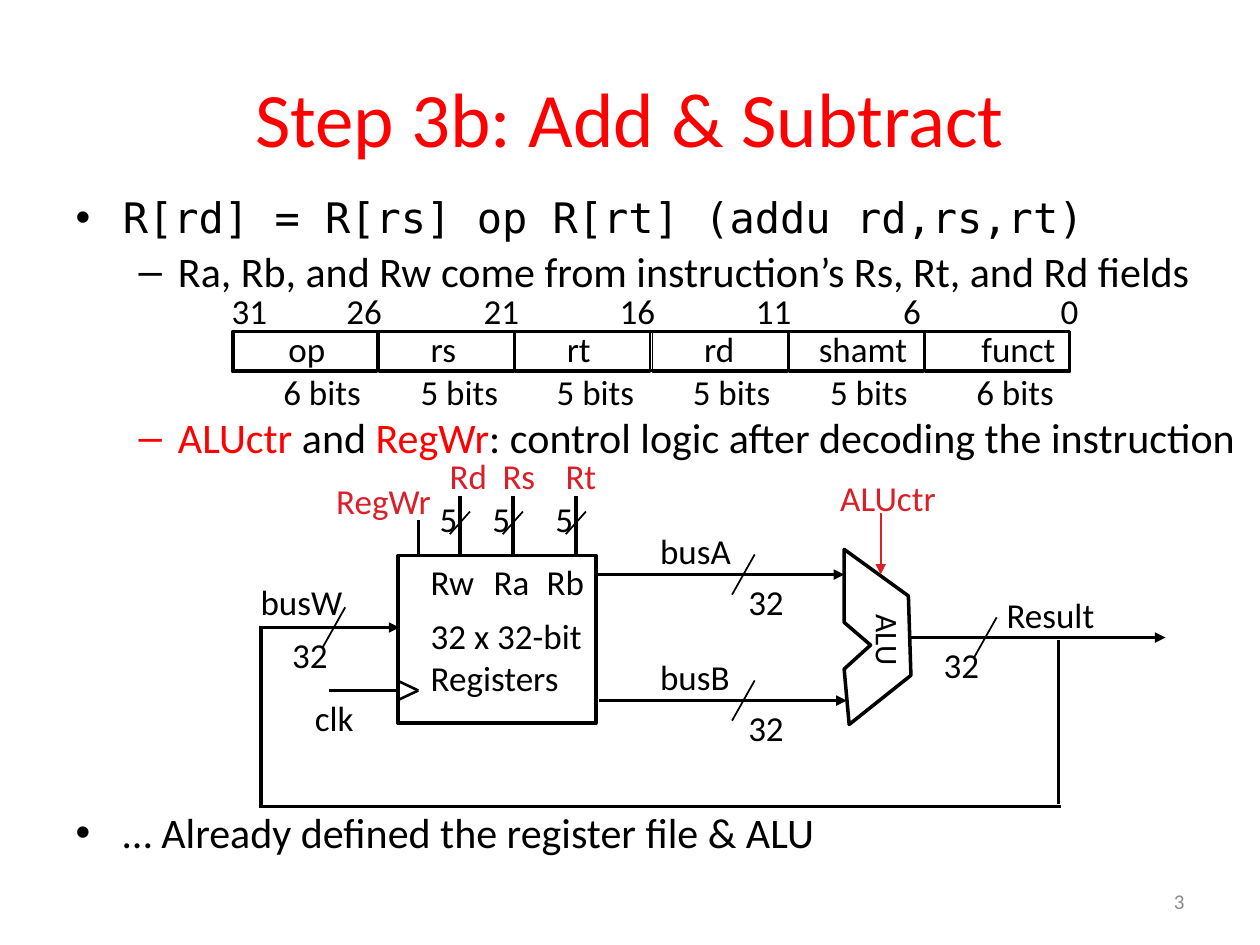
from dataclasses import dataclass

from pptx import Presentation
from pptx.dml.color import RGBColor
from pptx.enum.shapes import MSO_CONNECTOR, MSO_SHAPE
from pptx.enum.text import MSO_ANCHOR, MSO_AUTO_SIZE, PP_ALIGN
from pptx.oxml.ns import qn
from pptx.util import Pt
from lxml.etree import SubElement

EMU_PER_PX = 9144  # 100 px to the inch
BLACK, RED, CRIMSON, GREY = "000000", "FF0000", "DA1F28", "898989"
SANS, MONO = "Calibri", "DejaVu Sans Mono"


@dataclass
class Field:
    """One field of the instruction word, with its top bit number."""
    name: str
    bits: str
    top_bit: str
    left: int
    width: int
    name_left: int
    bits_left: int
    top_bit_left: int


@dataclass
class Label:
    text: str
    left: int
    top: int
    width: int
    color: str = BLACK


@dataclass
class Wire:
    start: tuple[int, int]
    end: tuple[int, int]
    arrow: bool = False
    weight: float = 2
    color: str = BLACK


@dataclass
class Bullet:
    spans: list[tuple[str, str]]
    level: int
    space_before: int
    font: str = SANS


FIELDS = [
    Field("op", "6 bits", "31", 184, 115, 219, 215, 174),
    Field("rs", "5 bits", "26", 301, 107, 332, 324, 265),
    Field("rt", "5 bits", "21", 409, 107, 440, 432, 374),
    Field("rd", "5 bits", "16", 518, 107, 549, 540, 482),
    Field("shamt", "5 bits", "11", 626, 107, 640, 649, 590),
    Field("funct", "6 bits", "6", 734, 115, 769, 765, 707),
]
NAME_WIDTHS = {"op": 50, "rs": 41, "rt": 40, "rd": 45, "shamt": 92, "funct": 82}

BULLETS = [
    Bullet([("R[rd] = R[rs] op R[rt] (addu rd,rs,rt)", BLACK)], 0, 0, MONO),
    Bullet([("Ra, Rb, and Rw come from instruction’s Rs, Rt, and Rd fields", BLACK)], 1, 2),
    Bullet([("ALUctr", RED), (" and ", BLACK), ("RegWr", RED),
            (": control logic after decoding the instruction", BLACK)], 1, 66),
    Bullet([("… Already defined the register file & ALU", BLACK)], 0, 197),
]

WIRES = [
    Wire((722, 506), (925, 506), arrow=True),                  # Result
    Wire((206, 498), (317, 498), arrow=True),                  # busW
    Wire((473, 456), (670, 456), arrow=True),                  # busA
    Wire((475, 556), (672, 556), arrow=True),                  # busB
    Wire((699, 407), (699, 456), True, 1, CRIMSON),            # ALUctr
    Wire((332, 441), (332, 413)),                              # RegWr
    Wire((314, 548), (261, 548)),                              # clk
    Wire((315, 540), (332, 548), weight=1.5),                  # clock notch
    Wire((332, 548), (315, 556), weight=1.5),
    Wire((840, 508), (840, 638)),                              # write-back loop
    Wire((842, 640), (206, 640)),
    Wire((207, 641), (207, 497)),
]
BUS_SLASHES = [(782, 506), (265, 498), (590, 456), (590, 556)]
REGISTER_PORTS = {"Rd": 365, "Rs": 407, "Rt": 457}

LABELS = [
    Label("Result", 789, 466, 93), Label("32", 739, 506, 48),
    Label("ALUctr", 657, 373, 108, CRIMSON), Label("RegWr", 257, 376, 97, CRIMSON),
    Label("busW", 197, 456, 86), Label("32", 222, 498, 48),
    Label("clk", 240, 548, 52),
    Label("busA", 514, 415, 78), Label("32", 584, 456, 48),
    Label("busB", 514, 515, 77), Label("32", 584, 556, 48),
    Label("Rw", 332, 440, 56), Label("Ra", 382, 440, 50), Label("Rb", 424, 440, 51),
    Label("32 x 32-bit\nRegisters", 332, 483, 141),
]
ALU_OUTLINE = [(670, 482), (670, 436), (721, 473), (723, 536), (674, 575),
               (670, 531), (691, 512), (670, 494)]


def px(length: int) -> int:
    return length * EMU_PER_PX


def rgb(color: str) -> RGBColor:
    return RGBColor.from_string(color)


def place(shape, left: int, top: int, width: int, height: int) -> None:
    shape.left, shape.top, shape.width, shape.height = map(px, (left, top, width, height))


def style(font, size: int, color: str, name: str = SANS) -> None:
    font.size, font.name, font.color.rgb = Pt(size), name, rgb(color)


def outline(shape, weight: float) -> None:
    shape.shadow.inherit = False
    shape.fill.background()
    shape.line.color.rgb = rgb(BLACK)
    shape.line.width = Pt(weight)


def add_label(page, label: Label, size: int = 20, height: int = 43):
    box = page.shapes.add_textbox(*map(px, (label.left, label.top, label.width, height)))
    frame = box.text_frame
    frame.word_wrap = False
    frame.auto_size = MSO_AUTO_SIZE.SHAPE_TO_FIT_TEXT
    frame.text = label.text
    for para in frame.paragraphs:
        style(para.font, size, label.color)
    return box


def add_wire(page, wire: Wire) -> None:
    line = page.shapes.add_connector(MSO_CONNECTOR.STRAIGHT, *map(px, wire.start + wire.end))
    line.line.color.rgb = rgb(wire.color)
    line.line.width = Pt(wire.weight)
    properties = line._element.spPr
    if wire.arrow:
        SubElement(properties.get_or_add_ln(), qn("a:tailEnd"), type="triangle")
    SubElement(properties, qn("a:effectLst"))


def add_slash(page, x: int, y: int, half_width: int, half_height: int) -> None:
    """Mark a wire as a multi-bit bus, centred on (x, y)."""
    add_wire(page, Wire((x + half_width, y - half_height),
                        (x - half_width, y + half_height), weight=1))


def add_rectangle(page, left: int, top: int, width: int, height: int, weight: float) -> None:
    box = page.shapes.add_shape(MSO_SHAPE.RECTANGLE, *map(px, (left, top, width, height)))
    outline(box, weight)


def add_text_placeholders(page) -> None:
    title, body = page.placeholders
    place(title, 50, 30, 900, 125)
    title.text_frame.text = "Step 3b: Add & Subtract"
    style(title.text_frame.paragraphs[0].font, 44, RED)

    place(body, 50, 147, 950, 495)
    frame = body.text_frame
    frame.auto_size = MSO_AUTO_SIZE.NONE
    for index, bullet in enumerate(BULLETS):
        para = frame.add_paragraph() if index else frame.paragraphs[0]
        para.level = bullet.level
        para.space_before = Pt(bullet.space_before)
        style(para.font, 24, BLACK, bullet.font)
        for text, color in bullet.spans:
            span = para.add_run()
            span.text = text
            span.font.color.rgb = rgb(color)


def add_instruction_format(page) -> None:
    add_rectangle(page, 185, 263, 664, 31, 2)
    for field in FIELDS:
        add_rectangle(page, field.left, 263, field.width, 32, 1)
        add_label(page, Label(field.name, field.name_left, 255, NAME_WIDTHS[field.name]))
        add_label(page, Label(field.bits, field.bits_left, 289, 83))
        add_label(page, Label(field.top_bit, field.top_bit_left, 225,
                              20 + 14 * len(field.top_bit)))
    add_label(page, Label("0", 832, 225, 34))


def add_datapath(page) -> None:
    add_rectangle(page, 316, 441, 157, 133, 2)
    builder = page.shapes.build_freeform(*ALU_OUTLINE[0], scale=EMU_PER_PX)
    builder.add_line_segments(ALU_OUTLINE[1:], close=True)
    outline(builder.convert_to_shape(), 2)
    add_label(page, Label("ALU", 674, 489, 62), 18, 40).rotation = 90
    for wire in WIRES:
        add_wire(page, wire)
    for x, y in BUS_SLASHES:
        add_slash(page, x, y, 9, 16)
    for name, x in REGISTER_PORTS.items():
        add_wire(page, Wire((x, 394), (x, 441)))
        add_slash(page, x, 415, 8, 9)
        add_label(page, Label("5", x - 26, 390, 34))
        add_label(page, Label(name, x - 18, 356, 50 if name == "Rd" else 46, CRIMSON))
    for label in LABELS:
        add_label(page, label, height=43 + 34 * label.text.count("\n"))


def add_page_number(page) -> None:
    box = page.shapes.add_textbox(*map(px, (717, 695, 233, 40)))
    frame = box.text_frame
    frame.word_wrap = True
    frame.vertical_anchor = MSO_ANCHOR.MIDDLE
    frame.text = "3"
    frame.paragraphs[0].alignment = PP_ALIGN.RIGHT
    style(frame.paragraphs[0].font, 12, GREY)


def main() -> None:
    deck = Presentation()
    deck.slide_width, deck.slide_height = px(1000), px(750)
    page = deck.slides.add_slide(deck.slide_layouts[1])
    add_text_placeholders(page)
    add_instruction_format(page)
    add_datapath(page)
    add_page_number(page)
    deck.save("out.pptx")


if __name__ == "__main__":
    main()
